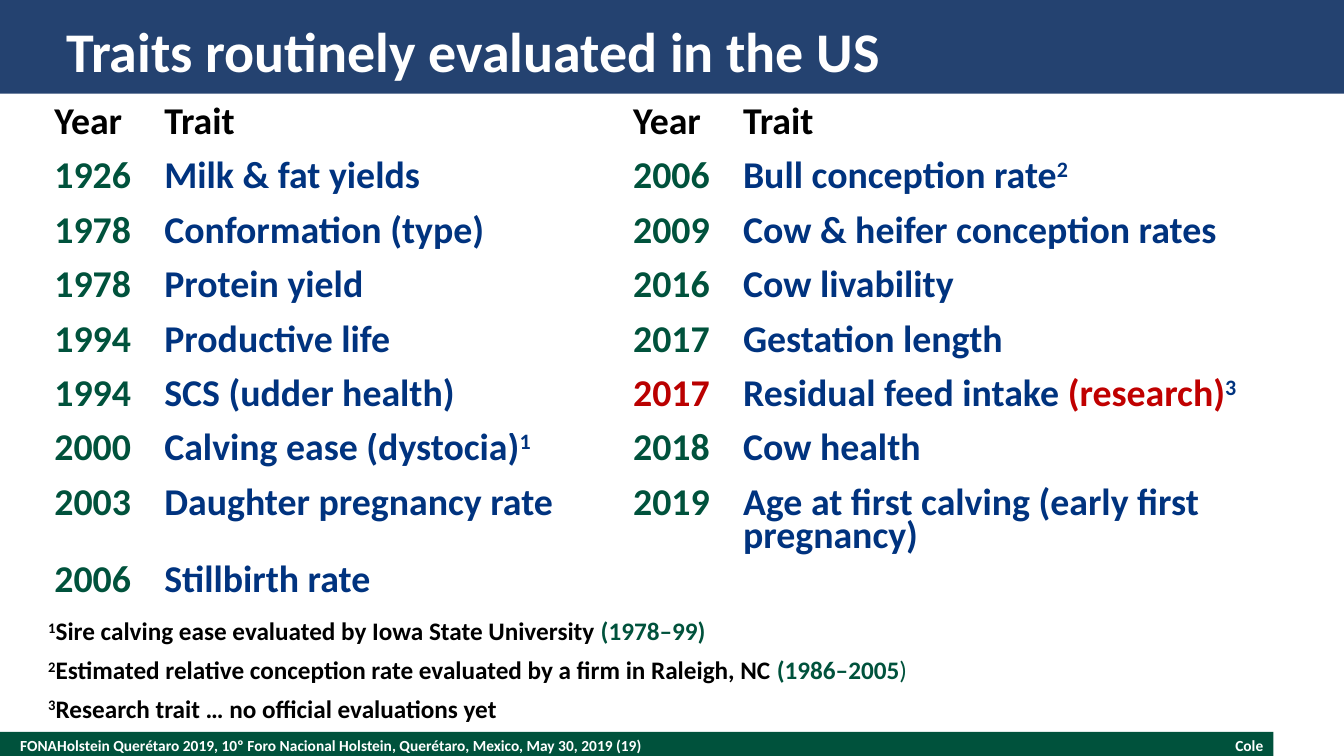
import pptx
import pptx.util
import pptx.dml.color
import pptx.enum.shapes
import pptx.enum.text

COLORS = {"navy": "244270", "green": "00523C", "blue": "00337F", "crimson": "BA0000",
          "red": "C00000", "black": "000000", "white": "FFFFFF"}
FONT = "Calibri"
WIDTH, HEIGHT = 13.33, 7.5

TITLE = "Traits routinely evaluated in the US"
EVENT = "FONAHolstein Querétaro 2019, 10º Foro Nacional Holstein, Querétaro, Mexico, May 30, 2019 (19)"
AUTHOR = "Cole"
HEADER = ("Year", "Trait")
EARLY_TRAITS = [
    ("1926", [("Milk & fat yields",)]),
    ("1978", [("Conformation (type)",)]),
    ("1978", [("Protein yield",)]),
    ("1994", [("Productive life",)]),
    ("1994", [("SCS (udder health)",)]),
    ("2000", [("Calving ease (dystocia)",), ("1", "blue", "super")]),
    ("2003", [("Daughter pregnancy rate",)]),
    ("2006", [("Stillbirth rate",)]),
]
LATE_TRAITS = [
    ("2006", [("Bull conception rate",), ("2", "blue", "super")]),
    ("2009", [("Cow & heifer conception rates",)]),
    ("2016", [("Cow livability",)]),
    ("2017", [("Gestation length",)]),
    ("2017", [("Residual feed intake ",), ("(research)", "red"), ("3", "blue", "super")]),
    ("2018", [("Cow health",)]),
    ("2019", [("Age at first calving (early first pregnancy)",)]),
]
RESEARCH_ROW = LATE_TRAITS[4]
FOOTNOTES = [
    [("1", "black", "super"), ("Sire calving ease evaluated by Iowa State University ",),
     ("(1978–99)", "green")],
    [("2", "black", "super"),
     ("Estimated relative conception rate evaluated by a firm in Raleigh, NC ",),
     ("(1986–2005", "green"), (")", "green", "light")],
    [("3", "black", "super"), ("Research trait … no official evaluations yet",)],
]
COLUMNS = (1.09, 4.65, 1.09, 5.54)
ROW_HEIGHT = 0.54


def inches(*lengths):
    return [pptx.util.Inches(length) for length in lengths]


def rgb(name):
    return pptx.dml.color.RGBColor.from_string(COLORS[name])


def write(para, text, size, color="white", align=None, leading=None, after=None):
    if align:
        para.alignment = align
    if leading:
        para.line_spacing = pptx.util.Pt(leading)
    if after:
        para.space_after = pptx.util.Pt(after)
    for words, *look in [(text,)] if isinstance(text, str) else text:
        shade = look[0] if look else color
        style = look[1] if len(look) > 1 else ""
        span = para.add_run()
        span.text = words
        span.font.name = FONT
        span.font.size = pptx.util.Pt(size)
        span.font.bold = style != "light"
        span.font.color.rgb = rgb(shade)
        if style == "super":
            span._r.get_or_add_rPr().set("baseline", "30000")


def add_band(page, place, color):
    band = page.shapes.add_shape(pptx.enum.shapes.MSO_SHAPE.RECTANGLE, *inches(*place))
    band.shadow.inherit = False
    band.fill.solid()
    band.fill.fore_color.rgb = rgb(color)
    band.line.fill.background()


def add_text(page, place, lines, inset=True, **style):
    frame = page.shapes.add_textbox(*inches(*place)).text_frame
    frame.word_wrap = True
    if not inset:
        frame.margin_left = frame.margin_right = frame.margin_top = frame.margin_bottom = 0
        frame.vertical_anchor = pptx.enum.text.MSO_ANCHOR.MIDDLE
    for index, line in enumerate(lines):
        para = frame.add_paragraph() if index else frame.paragraphs[0]
        write(para, line, **style)


def add_traits(page):
    rows = len(EARLY_TRAITS) + 1
    table = page.shapes.add_table(
        rows, len(COLUMNS), *inches(0.44, 1.05, sum(COLUMNS), rows * ROW_HEIGHT)).table
    for column, width in zip(table.columns, COLUMNS):
        column.width = pptx.util.Inches(width)
    for row in table.rows:
        row.height = pptx.util.Inches(ROW_HEIGHT)
        for cell in row.cells:
            cell.fill.solid()
            cell.fill.fore_color.rgb = rgb("white")
    for left, traits in ((0, EARLY_TRAITS), (2, LATE_TRAITS)):
        for offset, heading in enumerate(HEADER):
            write(table.cell(0, left + offset).text_frame.paragraphs[0], heading,
                  size=27, color="black", leading=24)
        for row, entry in enumerate(traits, 1):
            year_color = "crimson" if entry is RESEARCH_ROW else "green"
            for offset, color in enumerate((year_color, "blue")):
                write(table.cell(row, left + offset).text_frame.paragraphs[0], entry[offset],
                      size=27, color=color, leading=24)


def main():
    deck = pptx.Presentation()
    deck.slide_width, deck.slide_height = inches(WIDTH, HEIGHT)
    page = deck.slides.add_slide(deck.slide_layouts[6])
    add_band(page, (0, 7.26, 12.63, 0.27), "green")
    add_band(page, (0, 0, WIDTH, 0.93), "navy")
    add_text(page, (0.2, 7.26, 8.67, 0.27), [EVENT], inset=False, size=11)
    add_text(page, (9.6, 7.3, 2.93, 0.19), [AUTHOR], inset=False, size=11,
             align=pptx.enum.text.PP_ALIGN.RIGHT)
    add_text(page, (0.66, 0.2, 12, 0.6), [TITLE], inset=False, size=40)
    add_traits(page)
    add_text(page, (0.38, 6.06, 11.21, 1.18), FOOTNOTES, size=18, color="black", after=6)
    deck.save("out.pptx")


if __name__ == "__main__":
    main()
